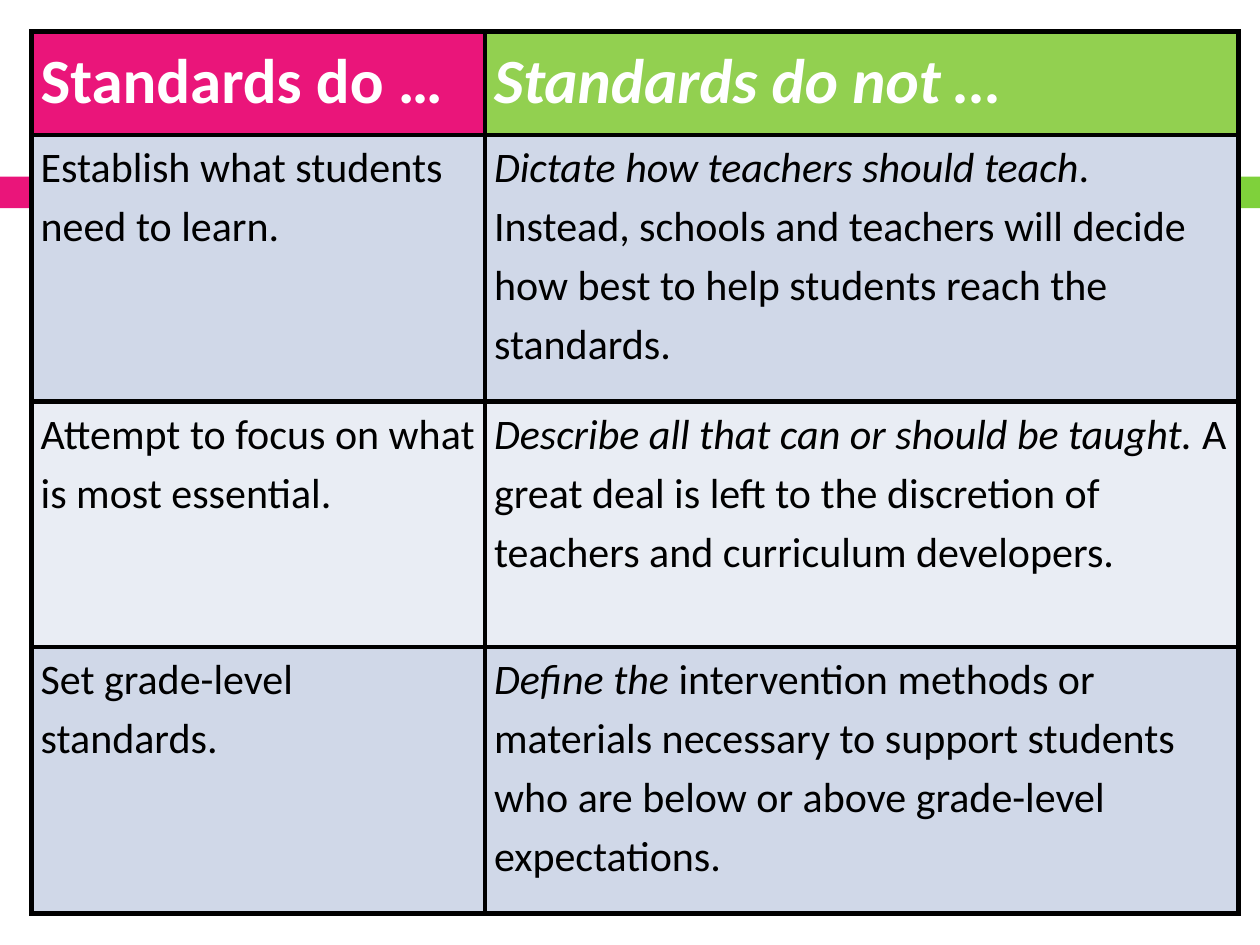
from lxml.etree import SubElement
from pptx import Presentation
from pptx.dml.color import RGBColor
from pptx.enum.shapes import MSO_SHAPE as Shape
from pptx.oxml.ns import qn
from pptx.util import Cm, Pt

PINK, GREEN = "EA157A", "7FD13B"


def paint(fill, color):
    fill.solid()
    fill.fore_color.rgb = RGBColor.from_string(color)


def add_borders(cell, color, width):
    properties = cell._tc.get_or_add_tcPr()
    for side in ("lnL", "lnR", "lnT", "lnB"):
        line = SubElement(properties, qn(f"a:{side}"), w=str(width))
        solid = SubElement(line, qn("a:solidFill"))
        SubElement(solid, qn("a:srgbClr"), val=color)


presentation = Presentation()
presentation.slide_width = Cm(25.4)
presentation.slide_height = Cm(19.05)
slide = presentation.slides.add_slide(presentation.slide_layouts[6])

# Accent band behind the table
for left, width, color in ((0, 1.47, PINK), (1.65, 23.75, GREEN)):
    band = slide.shapes.add_shape(Shape.RECTANGLE, Cm(left), Cm(3.56), Cm(width), Cm(0.64))
    band.shadow.inherit = False
    band.line.fill.background()
    paint(band.fill, color)

# Each cell is an italic part followed by an upright part
rows = [
    [("", "Standards do …"), ("Standards do not …", "")],
    [("", "Establish what students need to learn."),
     ("Dictate how teachers should teach",
      ". Instead, schools and teachers will decide how best to help students "
      "reach the standards.")],
    [("", "Attempt to focus on what is most essential."),
     ("Describe all that can or should be taught. ",
      "A great deal is left to the discretion of teachers and curriculum developers.")],
    [("", "Set grade-level standards."),
     ("Define the ",
      "intervention methods or materials necessary to support students who are "
      "below or above grade-level expectations.")],
]
fills = [(PINK, "92D050"), ("D0D8E8",) * 2, ("E9EDF4",) * 2, ("D0D8E8",) * 2]
column_widths = (9.14, 15.19)
row_heights = (2.08, 5.38, 4.94, 5.38)

# Table grid
table = slide.shapes.add_table(
    len(rows), len(column_widths), Cm(0.64), Cm(0.64),
    Cm(sum(column_widths)), Cm(sum(row_heights))).table
for column, width in zip(table.columns, column_widths):
    column.width = Cm(width)
for row, height in zip(table.rows, row_heights):
    row.height = Cm(height)

# Cell text, borders and fills
for row_index, row in enumerate(rows):
    is_header = row_index == 0
    for column_index, parts in enumerate(row):
        cell = table.cell(row_index, column_index)
        cell.margin_left = cell.margin_right = Cm(0.18)
        cell.margin_top = cell.margin_bottom = 0
        add_borders(cell, "000000", Pt(3))
        paint(cell.fill, fills[row_index][column_index])
        paragraph = cell.text_frame.paragraphs[0]
        paragraph.line_spacing = 1.15
        for text, italic in zip(parts, (True, False)):
            if not text:
                continue
            run = paragraph.add_run()
            run.text = text
            run.font.name = "Calibri"
            run.font.size = Pt(36 if is_header else 24)
            run.font.bold = is_header
            run.font.italic = italic
            paint(run.font.fill, "FFFFFF" if is_header else "000000")

presentation.save("out.pptx")
